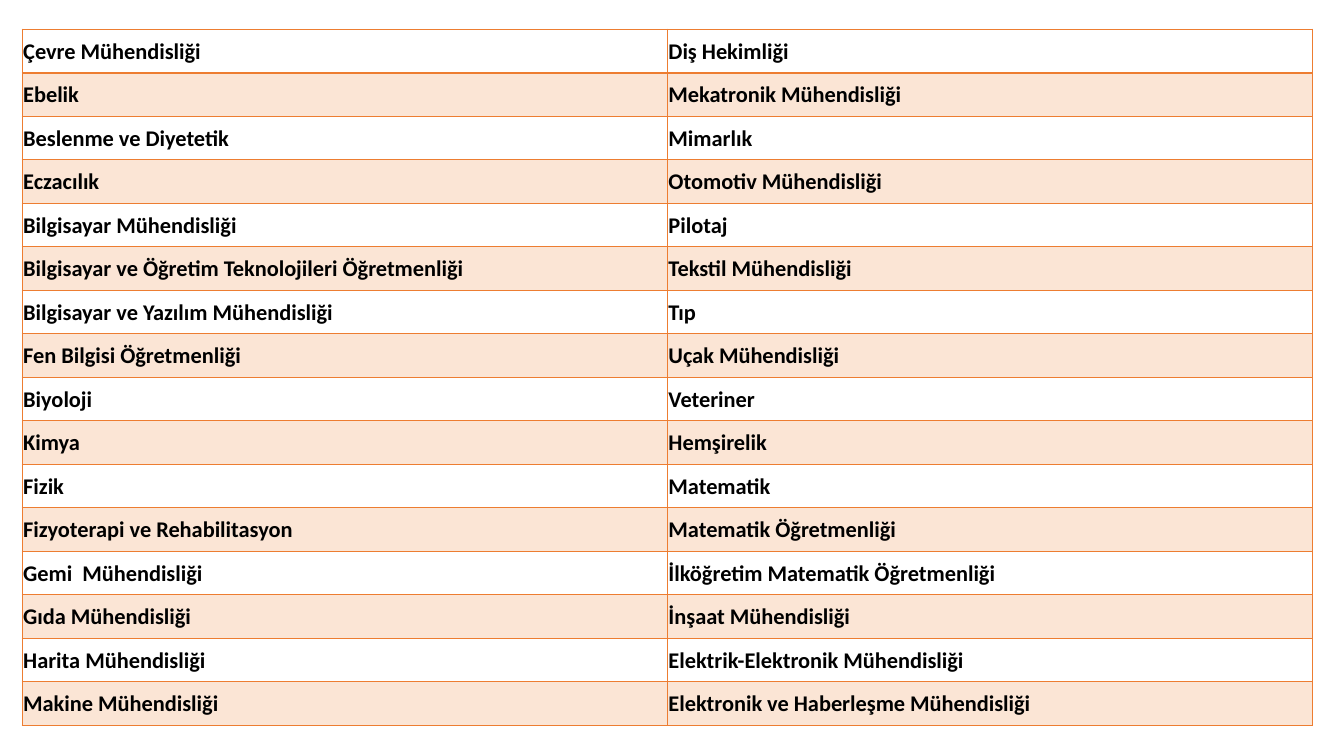
from dataclasses import dataclass

from lxml.etree import SubElement
from pptx import Presentation
from pptx.dml.color import RGBColor
from pptx.enum.text import MSO_ANCHOR
from pptx.oxml.ns import qn
from pptx.table import _Cell as Cell
from pptx.util import Inches, Pt

ORANGE = "ED7D31"
BLACK = "000000"
TINT = 20  # percent opacity of the banded rows


@dataclass
class Pair:
    left: str
    right: str


PAIRS = [
    Pair("Çevre Mühendisliği", "Diş Hekimliği"),
    Pair("Ebelik", "Mekatronik Mühendisliği"),
    Pair("Beslenme ve Diyetetik", "Mimarlık"),
    Pair("Eczacılık", "Otomotiv Mühendisliği"),
    Pair("Bilgisayar Mühendisliği", "Pilotaj"),
    Pair("Bilgisayar ve Öğretim Teknolojileri Öğretmenliği", "Tekstil Mühendisliği"),
    Pair("Bilgisayar ve Yazılım Mühendisliği", "Tıp"),
    Pair("Fen Bilgisi Öğretmenliği", "Uçak Mühendisliği"),
    Pair("Biyoloji", "Veteriner"),
    Pair("Kimya", "Hemşirelik"),
    Pair("Fizik", "Matematik"),
    Pair("Fizyoterapi ve Rehabilitasyon", "Matematik Öğretmenliği"),
    Pair("Gemi  Mühendisliği", "İlköğretim Matematik Öğretmenliği"),
    Pair("Gıda Mühendisliği", "İnşaat Mühendisliği"),
    Pair("Harita Mühendisliği", "Elektrik-Elektronik Mühendisliği"),
    Pair("Makine Mühendisliği", "Elektronik ve Haberleşme Mühendisliği"),
]


def color(code: str) -> RGBColor:
    return RGBColor.from_string(code)


def border(cell: Cell, base: float) -> None:
    """Outline the cell at 1 pt, with its bottom edge `base` points wide."""
    props = cell._tc.get_or_add_tcPr()
    for side, width in (("L", 1), ("R", 1), ("T", 1), ("B", base)):
        line = SubElement(props, qn(f"a:ln{side}"), w=str(Pt(width)))
        fill = SubElement(line, qn("a:solidFill"))
        SubElement(fill, qn("a:srgbClr"), val=ORANGE)


def shade(cell: Cell, band: bool) -> None:
    if not band:
        cell.fill.background()
        return
    cell.fill.solid()
    cell.fill.fore_color.rgb = color(ORANGE)
    tone = cell._tc.tcPr.find(qn("a:solidFill")).find(qn("a:srgbClr"))
    SubElement(tone, qn("a:alpha"), val=str(TINT * 1000))


def write(cell: Cell, text: str) -> None:
    cell.vertical_anchor = MSO_ANCHOR.MIDDLE
    cell.margin_left = cell.margin_right = cell.margin_top = Inches(0.01)
    cell.margin_bottom = 0
    run = cell.text_frame.paragraphs[0].add_run()
    run.text = text
    run.font.name = "Calibri"
    run.font.size = Pt(16)
    run.font.bold = True
    run.font.color.rgb = color(BLACK)


def main() -> None:
    deck = Presentation()
    deck.slide_width, deck.slide_height = Inches(13.33), Inches(7.5)
    slide = deck.slides.add_slide(deck.slide_layouts[6])
    table = slide.shapes.add_table(
        len(PAIRS), 2, Inches(0.22), Inches(0.29), Inches(12.8), Inches(6.91)
    ).table
    table.first_row = table.horz_banding = False
    for row, pair in enumerate(PAIRS):
        for col, text in enumerate((pair.left, pair.right)):
            cell = table.cell(row, col)
            write(cell, text)
            border(cell, 2 if row == 0 else 1)
            shade(cell, row % 2 == 1)
    deck.save("out.pptx")


if __name__ == "__main__":
    main()
